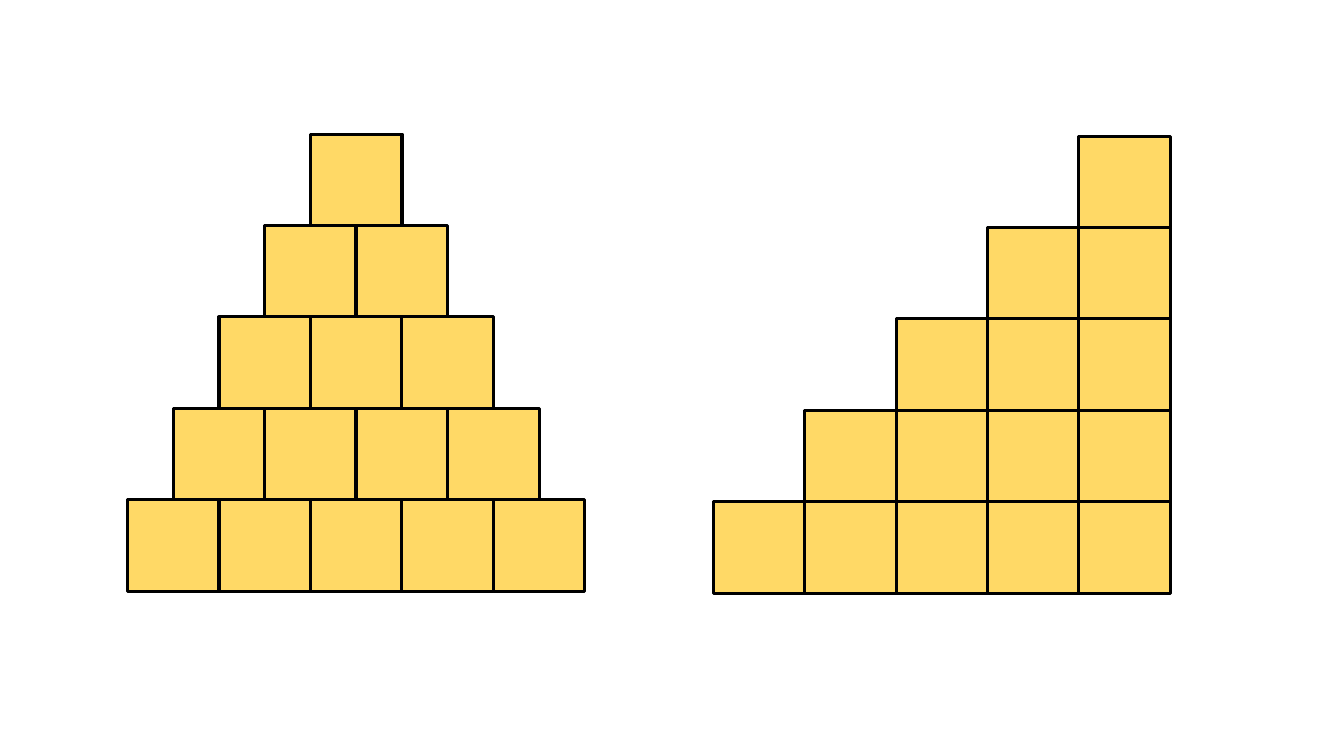
from dataclasses import dataclass

from pptx import Presentation
from pptx.dml.color import RGBColor
from pptx.enum.shapes import MSO_SHAPE as Shape
from pptx.slide import Slide
from pptx.util import Pt


@dataclass(frozen=True)
class Theme:
    fill: RGBColor = RGBColor(0xFF, 0xD9, 0x66)
    outline: RGBColor = RGBColor(0, 0, 0)
    outline_width: float = 2.25
    block_size: float = 65.5
    pitch: float = 65.25


@dataclass(frozen=True)
class BlockStack:
    apex_left: float
    apex_top: float
    row_shift: float
    rows: int = 5


THEME = Theme()
STACKS = (
    BlockStack(apex_left=221.7, apex_top=95.8, row_shift=THEME.pitch / 2),
    BlockStack(apex_left=770.6, apex_top=97.3, row_shift=THEME.pitch),
)


def draw_block(shapes, left: float, top: float) -> None:
    size = Pt(THEME.block_size)
    s = shapes.add_shape(Shape.RECTANGLE, Pt(left), Pt(top), size, size)
    s.shadow.inherit = False
    s.fill.solid()
    s.fill.fore_color.rgb = THEME.fill
    s.line.color.rgb = THEME.outline
    s.line.width = Pt(THEME.outline_width)


def draw_stack(slide: Slide, stack: BlockStack) -> None:
    for row in range(stack.rows):
        shapes = slide.shapes.add_group_shape().shapes if row else slide.shapes
        left = stack.apex_left - row * stack.row_shift
        top = stack.apex_top + row * THEME.pitch
        for column in range(row + 1):
            draw_block(shapes, left + column * THEME.pitch, top)


def main() -> None:
    prs = Presentation()
    prs.slide_width, prs.slide_height = Pt(960), Pt(540)
    slide = prs.slides.add_slide(prs.slide_layouts[6])
    for stack in STACKS:
        draw_stack(slide, stack)
    prs.save("out.pptx")


if __name__ == "__main__":
    main()
